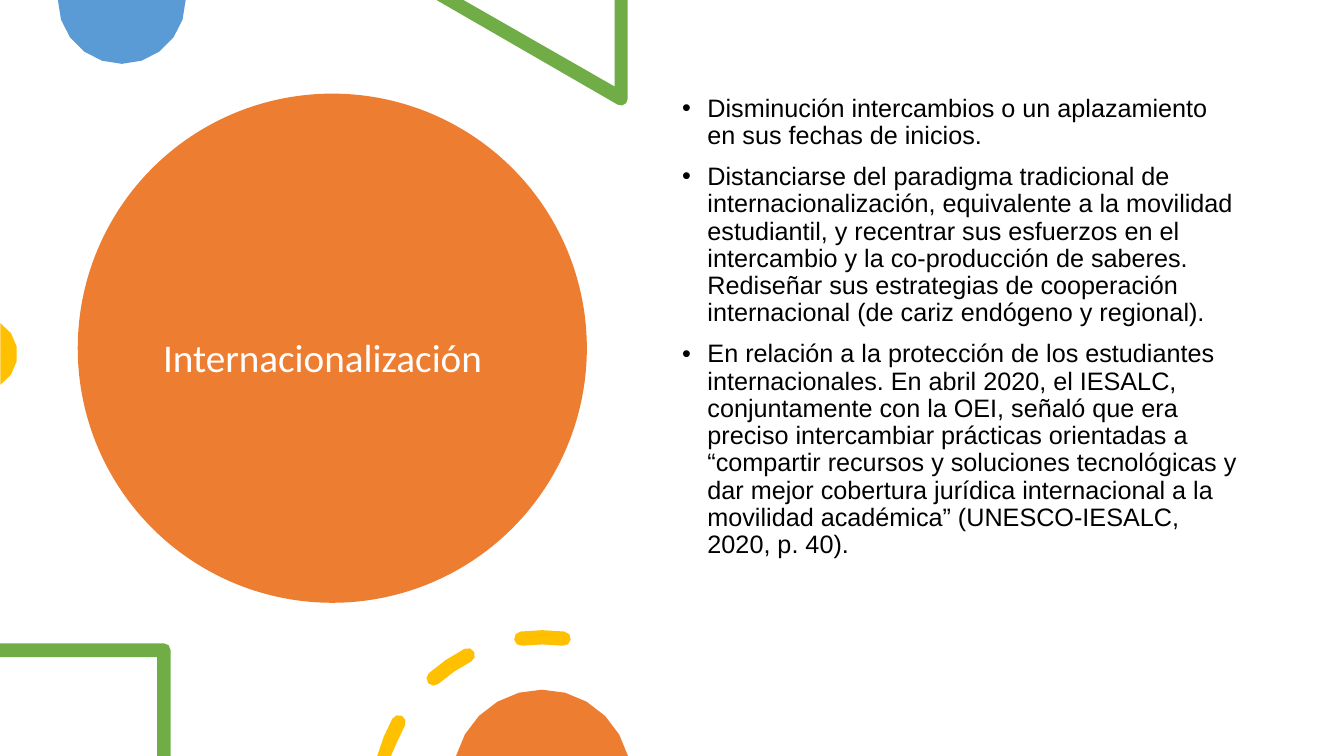
"""Build the "Internacionalización" slide with its geometric decorations."""
import math
from dataclasses import dataclass
from typing import NamedTuple

import pptx
import pptx.dml.color
import pptx.enum.shapes
import pptx.enum.text
import pptx.oxml.ns
import pptx.util
from lxml import etree

Cm = pptx.util.Cm


@dataclass(frozen=True)
class Theme:
    orange: str = "ED7D31"
    blue: str = "5B9BD5"
    green: str = "70AD47"
    yellow: str = "FFC000"
    white: str = "FFFFFF"
    black: str = "000000"
    title_font: str = "Calibri"
    body_font: str = "Arial"
    title_size: int = 28
    body_size: int = 18
    paragraph_gap: int = 10
    line_spacing: float = 0.9


class Point(NamedTuple):
    x: float
    y: float


class Box(NamedTuple):
    left: float
    top: float
    width: float
    height: float


class Dash(NamedTuple):
    start: float
    end: float


@dataclass(frozen=True)
class Decoration:
    color: str
    contours: list[list[Point]]


THEME = Theme()
SLIDE_WIDTH, SLIDE_HEIGHT = 33.87, 19.05
CIRCLE = Box(1.96, 2.36, 12.83, 12.83)
TITLE = Box(3.86, 3.41, 8.99, 11.3)
BODY = Box(16.94, 2.28, 14.6, 13.59)
BULLET_INDENT = 0.64
ARC_TOLERANCE = 0.02
RING_CENTER = Point(13.67, 20.2)
RING_RADIUS, DASH_HALF_WIDTH, CORNER_RADIUS = 4.14, 0.18, 0.17
RING_DASHES = [Dash(195.5, 208.9), Dash(228.5, 243), Dash(262.6, 277.4)]
POINTS = [
    "Disminución intercambios o un aplazamiento en sus fechas de inicios.",
    "Distanciarse del paradigma tradicional de internacionalización, equivalente a la "
    "movilidad estudiantil, y recentrar sus esfuerzos en el intercambio y la co-producción "
    "de saberes. Rediseñar sus estrategias de cooperación internacional (de cariz endógeno "
    "y regional).",
    "En relación a la protección de los estudiantes internacionales. En abril 2020, el "
    "IESALC, conjuntamente con la OEI, señaló que era preciso intercambiar prácticas "
    "orientadas a “compartir recursos y soluciones tecnológicas y dar mejor cobertura "
    "jurídica internacional a la movilidad académica” (UNESCO-IESALC, 2020, p. 40).",
]


def polar(center: Point, radius: float, angle: float) -> Point:
    """Return the point at an angle in degrees, clockwise from the right."""
    turn = math.radians(angle)
    return Point(center.x + radius * math.cos(turn), center.y + radius * math.sin(turn))


def arc(center: Point, radius: float, start: float, end: float) -> list[Point]:
    """Return the fewest points that follow a circular arc within the tolerance."""
    widest_step = math.degrees(2 * math.acos(1 - ARC_TOLERANCE / radius))
    steps = math.ceil(abs(end - start) / widest_step)
    return [polar(center, radius, start + (end - start) * i / steps) for i in range(steps + 1)]


def dash_outline(dash: Dash) -> list[Point]:
    """Return the outline of one round-capped dash of the ring."""
    outer, inner = RING_RADIUS + DASH_HALF_WIDTH, RING_RADIUS - DASH_HALF_WIDTH
    head = polar(RING_CENTER, RING_RADIUS, dash.end)
    tail = polar(RING_CENTER, RING_RADIUS, dash.start)
    sides = [
        arc(RING_CENTER, outer, dash.start, dash.end),
        arc(head, DASH_HALF_WIDTH, dash.end, dash.end + 180),
        arc(RING_CENTER, inner, dash.end, dash.start),
        arc(tail, DASH_HALF_WIDTH, dash.start + 180, dash.start + 360),
    ]
    return [point for side in sides for point in side[:-1]]


DECORATIONS = [
    Decoration(THEME.blue, [arc(Point(3.07, 0), 1.61, 0, 180)]),
    Decoration(THEME.green, [[
        Point(15.82, 0), Point(15.49, 0), Point(15.49, 2.18), Point(11.68, 0), Point(11, 0),
        *arc(Point(15.65, 2.49), CORNER_RADIUS, 120, 0)]]),
    Decoration(THEME.yellow, [arc(Point(-0.48, 8.92), 0.92, -58, 58)]),
    Decoration(THEME.green, [[
        Point(0, 16.21), *arc(Point(4.13, 16.38), CORNER_RADIUS, -90, 0),
        Point(4.3, SLIDE_HEIGHT), Point(3.96, SLIDE_HEIGHT), Point(3.96, 16.56),
        Point(0, 16.56)]]),
    Decoration(THEME.yellow, [dash_outline(dash) for dash in RING_DASHES]),
    Decoration(THEME.orange, [arc(Point(13.66, 19.62), 2.24, 194.7, 345.3)]),
]


def paint(shape, color: str) -> None:
    """Give a shape a flat fill without line or shadow."""
    shape.shadow.inherit = False
    shape.fill.solid()
    shape.fill.fore_color.rgb = pptx.dml.color.RGBColor.from_string(color)
    shape.line.fill.background()


def draw_decoration(slide, decoration: Decoration) -> None:
    """Draw the contours of a decoration, cut at the edges of the slide."""
    builder = None
    for contour in decoration.contours:
        first, *rest = [(Cm(max(p.x, 0)), Cm(min(p.y, SLIDE_HEIGHT))) for p in contour]
        if builder is None:
            builder = slide.shapes.build_freeform(*first)
        else:
            builder.move_to(*first)
        builder.add_line_segments(rest, close=True)
    paint(builder.convert_to_shape(), decoration.color)


def add_bullet(paragraph) -> None:
    """Give a paragraph a round bullet with a hanging indent."""
    properties = paragraph._p.get_or_add_pPr()
    properties.set("marL", str(Cm(BULLET_INDENT)))
    properties.set("indent", str(-Cm(BULLET_INDENT)))
    font = etree.SubElement(properties, pptx.oxml.ns.qn("a:buFont"))
    font.set("typeface", THEME.body_font)
    etree.SubElement(properties, pptx.oxml.ns.qn("a:buChar")).set("char", "•")


def add_text(slide, box: Box, texts: list[str], *, font: str, size: int, color: str,
             anchor=pptx.enum.text.MSO_ANCHOR.TOP, gap: int = 0, bulleted: bool = False) -> None:
    """Add a wrapped text box with one paragraph for each text."""
    frame = slide.shapes.add_textbox(*map(Cm, box)).text_frame
    frame.word_wrap = True
    frame.vertical_anchor = anchor
    for index, text in enumerate(texts):
        paragraph = frame.add_paragraph() if index else frame.paragraphs[0]
        paragraph.line_spacing = THEME.line_spacing
        paragraph.space_before = pptx.util.Pt(gap)
        if bulleted:
            add_bullet(paragraph)
        run = paragraph.add_run()
        run.text = text
        run.font.name = font
        run.font.size = pptx.util.Pt(size)
        run.font.color.rgb = pptx.dml.color.RGBColor.from_string(color)


def main() -> None:
    """Build and save the presentation."""
    deck = pptx.Presentation()
    deck.slide_width, deck.slide_height = Cm(SLIDE_WIDTH), Cm(SLIDE_HEIGHT)
    slide = deck.slides.add_slide(deck.slide_layouts[6])
    title_circle = slide.shapes.add_shape(
        pptx.enum.shapes.MSO_SHAPE.OVAL, *map(Cm, CIRCLE))
    paint(title_circle, THEME.orange)
    add_text(slide, TITLE, ["Internacionalización"], font=THEME.title_font,
             size=THEME.title_size, color=THEME.white,
             anchor=pptx.enum.text.MSO_ANCHOR.MIDDLE)
    for decoration in DECORATIONS:
        draw_decoration(slide, decoration)
    add_text(slide, BODY, POINTS, font=THEME.body_font, size=THEME.body_size,
             color=THEME.black, gap=THEME.paragraph_gap, bulleted=True)
    deck.save("out.pptx")


if __name__ == "__main__":
    main()
